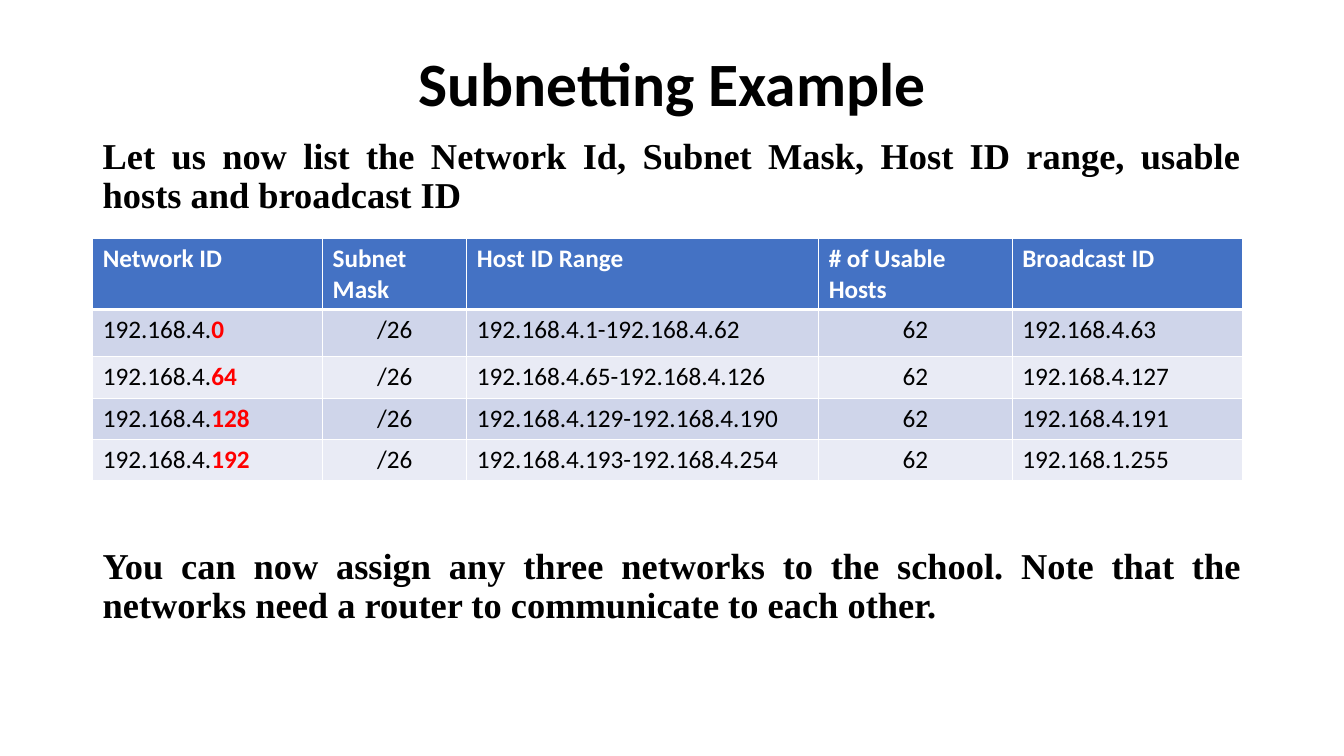
from pptx import Presentation
from pptx.dml.color import RGBColor
from pptx.enum.text import MSO_ANCHOR, PP_ALIGN
from pptx.oxml.ns import qn
from pptx.util import Inches, Pt
from lxml import etree

LEFT, CENTER, JUSTIFY = PP_ALIGN.LEFT, PP_ALIGN.CENTER, PP_ALIGN.JUSTIFY
TOP, MIDDLE = MSO_ANCHOR.TOP, MSO_ANCHOR.MIDDLE
COLORS = {"black": "000000", "white": "FFFFFF", "red": "FF0000",
          "header": "4472C4", "odd": "CFD5EA", "even": "E9EBF5"}
SANS, SERIF = "Calibri", "Times New Roman"


class SlideBuilder:
    """Holds the style and the current slide, and adds elements to it."""

    def __init__(self, prs):
        self.s = prs.slides.add_slide(prs.slide_layouts[6])

    def run(self, p, text, size, font=SANS, color="black", bold=False):
        r = p.add_run()
        r.text = text
        r.font.size = Pt(size)
        r.font.name = font
        r.font.bold = bold
        r.font.color.rgb = RGBColor.from_string(COLORS[color])

    def text(self, box, paragraphs, size, font, align, anchor=TOP, gap=0):
        tf = self.s.shapes.add_textbox(*map(Inches, box)).text_frame
        tf.word_wrap = True
        tf.vertical_anchor = anchor
        for i, text in enumerate(paragraphs):
            p = tf.add_paragraph() if i else tf.paragraphs[0]
            p.alignment = align
            p.line_spacing = 0.9
            p.space_before = Pt(gap if i else 0)
            self.run(p, text, size, font, bold=True)

    def borders(self, cell, widths):
        tc_pr = cell._tc.get_or_add_tcPr()
        for side, width in widths.items():
            ln = etree.SubElement(tc_pr, qn(f"a:ln{side}"), w=str(Pt(width)))
            fill = etree.SubElement(ln, qn("a:solidFill"))
            etree.SubElement(fill, qn("a:srgbClr"), val=COLORS["white"])

    def cell(self, cell, runs, fill, align, widths):
        self.borders(cell, widths)
        cell.fill.solid()
        cell.fill.fore_color.rgb = RGBColor.from_string(COLORS[fill])
        p = cell.text_frame.paragraphs[0]
        p.alignment = align
        for text, color, bold in runs:
            self.run(p, text, 18, color=color, bold=bold)

    def table(self, left, top, col_widths, row_heights, header, rows):
        table = self.s.shapes.add_table(
            len(row_heights), len(col_widths), Inches(left), Inches(top),
            Inches(sum(col_widths)), Inches(sum(row_heights))).table
        for col, width in zip(table.columns, col_widths):
            col.width = Inches(width)
        for row, height in zip(table.rows, row_heights):
            row.height = Inches(height)
        for j, title in enumerate(header):
            self.cell(table.cell(0, j), [(title, "white", True)], "header",
                      LEFT, {"L": 1, "R": 1, "T": 1, "B": 3})
        for i, values in enumerate(rows, 1):
            for j, value in enumerate(values):
                runs = [(value, "black", False)]
                if j == 0:
                    network, host = value.rsplit(".", 1)
                    runs = [(network + ".", "black", False), (host, "red", True)]
                self.cell(table.cell(i, j), runs, "odd" if i % 2 else "even",
                          CENTER if j in (1, 3) else LEFT,
                          {"L": 1, "R": 1, "T": 3 if i == 1 else 1, "B": 1})


def main():
    prs = Presentation()
    prs.slide_width, prs.slide_height = Inches(13.33), Inches(7.5)
    slide = SlideBuilder(prs)
    slide.text((0.92, 0.4, 11.5, 0.92), ["Subnetting Example"],
               44, SANS, CENTER, MIDDLE)
    slide.text((0.92, 1.32, 11.5, 5.44), [
        "Let us now list the Network Id, Subnet Mask, Host ID range, "
        "usable hosts and broadcast ID",
        "You can now assign any three networks to the school. Note that the "
        "networks need a router to communicate to each other.",
    ], 26, SERIF, JUSTIFY, gap=236.5)
    slide.table(
        0.92, 2.37, [2.28, 1.43, 3.49, 1.92, 2.28], [0.7, 0.47] + [0.41] * 3,
        ["Network ID", "Subnet Mask", "Host ID Range", "# of Usable Hosts",
         "Broadcast ID"],
        [["192.168.4.0", "/26", "192.168.4.1-192.168.4.62", "62", "192.168.4.63"],
         ["192.168.4.64", "/26", "192.168.4.65-192.168.4.126", "62", "192.168.4.127"],
         ["192.168.4.128", "/26", "192.168.4.129-192.168.4.190", "62", "192.168.4.191"],
         ["192.168.4.192", "/26", "192.168.4.193-192.168.4.254", "62", "192.168.1.255"]])
    prs.save("out.pptx")


if __name__ == "__main__":
    main()
